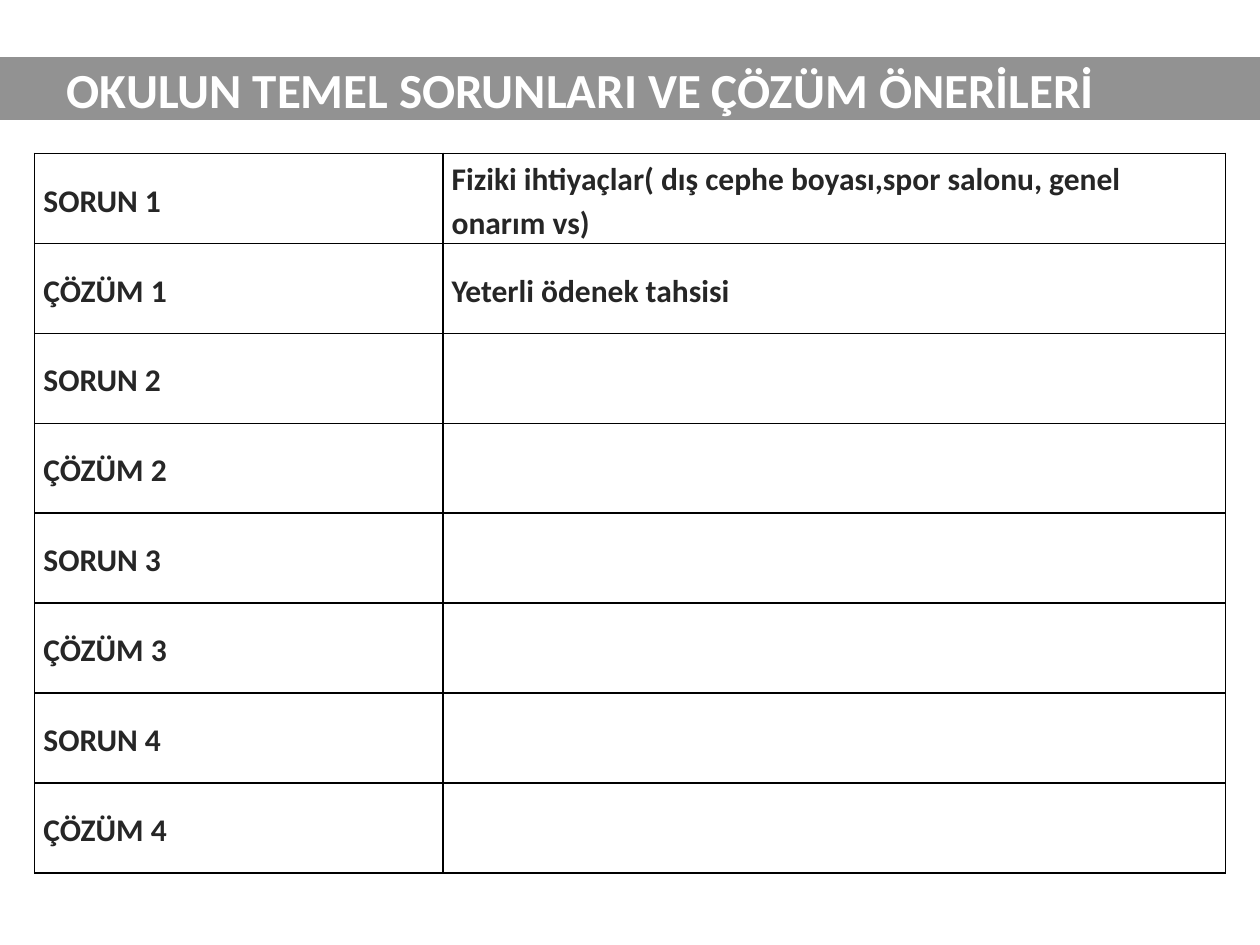
"""Build the slide of school problems and proposed solutions."""
from dataclasses import dataclass

import pptx
import pptx.dml.color
import pptx.enum.text
import pptx.oxml
import pptx.oxml.ns
import pptx.util

Pt = pptx.util.Pt
RGBColor = pptx.dml.color.RGBColor
MIDDLE = pptx.enum.text.MSO_ANCHOR.MIDDLE

WHITE = RGBColor(0xFF, 0xFF, 0xFF)
GREY = RGBColor(0x92, 0x92, 0x92)
DARK = RGBColor(0x26, 0x26, 0x26)
BLACK = RGBColor(0, 0, 0)

TITLE_FONT = {"name": "Calibri", "size": Pt(28), "bold": True}
CELL_FONT = {"name": "Calibri", "size": Pt(18), "bold": True}
COLUMN_WIDTHS = (Pt(233.3), Pt(447.1))
ROW_HEIGHT = Pt(51.4)


@dataclass
class Issue:
    problem: str = ""
    solution: str = ""


ISSUES = [
    Issue("Fiziki ihtiyaçlar( dış cephe boyası,spor salonu, genel onarım vs)",
          "Yeterli ödenek tahsisi"),
    Issue(), Issue(), Issue(),
]


def set_all(target: object, values: dict) -> None:
    for name, value in values.items():
        setattr(target, name, value)


def add_title(s: pptx.slide.Slide, text: str) -> None:
    sp = s.shapes.title
    set_all(sp, {"left": Pt(0), "top": Pt(32.6), "width": Pt(720), "height": Pt(36)})
    sp.fill.solid()
    sp.fill.fore_color.rgb = GREY
    tf = sp.text_frame
    set_all(tf, {"text": text, "word_wrap": True, "vertical_anchor": MIDDLE,
                 "auto_size": pptx.enum.text.MSO_AUTO_SIZE.NONE,
                 "margin_left": Pt(38.2), "margin_top": Pt(0), "margin_bottom": Pt(0)})
    p = tf.paragraphs[0]
    p.alignment = pptx.enum.text.PP_ALIGN.LEFT
    font = p.runs[0].font
    set_all(font, TITLE_FONT)
    font.color.rgb = WHITE


def add_borders(cell: pptx.table._Cell) -> None:
    tc_pr = cell._tc.get_or_add_tcPr()
    for i, side in enumerate(("lnL", "lnR", "lnT", "lnB")):
        tc_pr.insert(i, pptx.oxml.parse_xml(
            f'<a:{side} {pptx.oxml.ns.nsdecls("a")} w="{Pt(1)}"><a:solidFill>'
            f'<a:srgbClr val="{BLACK}"/></a:solidFill></a:{side}>'))


def fill_cell(cell: pptx.table._Cell, text: str, space_after: pptx.util.Length) -> None:
    set_all(cell, {"vertical_anchor": MIDDLE, "margin_left": Pt(5), "margin_right": Pt(5),
                   "margin_top": Pt(0), "margin_bottom": Pt(0)})
    cell.fill.solid()
    cell.fill.fore_color.rgb = WHITE
    add_borders(cell)
    if text:
        p = cell.text_frame.paragraphs[0]
        set_all(p, {"line_spacing": 1.15, "space_after": space_after})
        r = p.add_run()
        r.text = text
        set_all(r.font, CELL_FONT)
        r.font.color.rgb = DARK


def add_issue_table(s: pptx.slide.Slide, issues: list[Issue]) -> None:
    rows = [row for n, issue in enumerate(issues, 1)
            for row in ((f"SORUN {n}", issue.problem), (f"ÇÖZÜM {n}", issue.solution))]
    table = s.shapes.add_table(len(rows), 2, Pt(19.8), Pt(87.7),
                               sum(COLUMN_WIDTHS), ROW_HEIGHT * len(rows)).table
    set_all(table, {"first_row": False, "horz_banding": False})
    for column, width in zip(table.columns, COLUMN_WIDTHS):
        column.width = width
    for i, (label, text) in enumerate(rows):
        table.rows[i].height = ROW_HEIGHT
        fill_cell(table.cell(i, 0), label, Pt(10))
        fill_cell(table.cell(i, 1), text, Pt(0))


def main() -> None:
    prs = pptx.Presentation()
    set_all(prs, {"slide_width": Pt(720), "slide_height": Pt(540)})
    s = prs.slides.add_slide(prs.slide_layouts[5])
    add_title(s, "OKULUN TEMEL SORUNLARI VE ÇÖZÜM ÖNERİLERİ")
    add_issue_table(s, ISSUES)
    prs.save("out.pptx")


if __name__ == "__main__":
    main()
